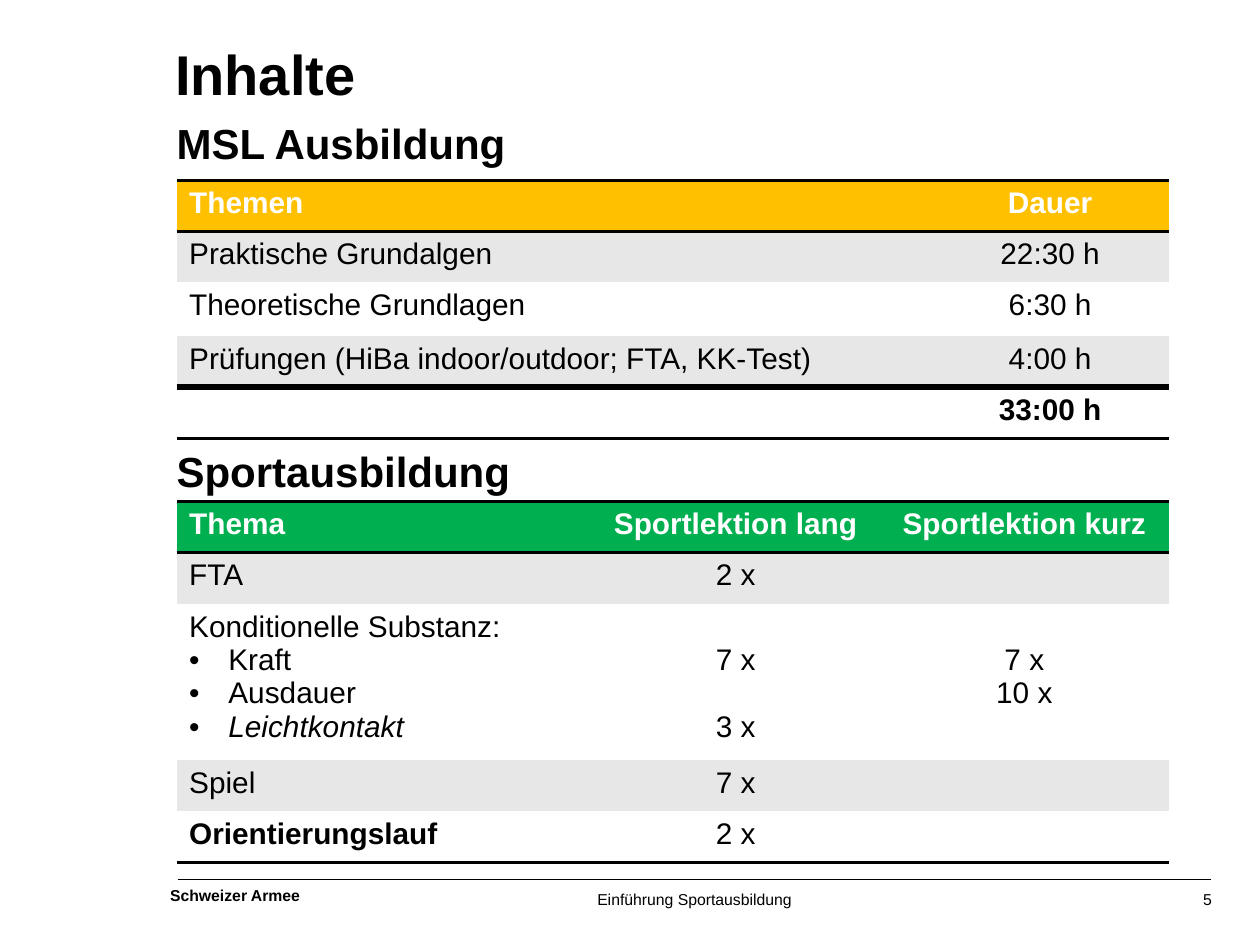
from lxml.etree import SubElement
from pptx import Presentation
from pptx.dml.color import RGBColor
from pptx.enum.shapes import MSO_CONNECTOR as Connector
from pptx.enum.text import MSO_ANCHOR as Anchor, MSO_AUTO_SIZE as AutoSize, PP_ALIGN as Align
from pptx.oxml.ns import qn
from pptx.util import Cm, Pt

BLACK = RGBColor(0x00, 0x00, 0x00)
WHITE = RGBColor(0xFF, 0xFF, 0xFF)
GREY = RGBColor(0xE7, 0xE7, 0xE7)
YELLOW = RGBColor(0xFF, 0xC0, 0x00)
GREEN = RGBColor(0x00, 0xB0, 0x50)
NO_GRID_STYLE = "{2D5ABB26-0587-4C30-8999-92F81FD0307C}"


class SlideBuilder:
    font_name = "Arial"
    table_size = 17
    line_step = 19  # points from one table line to the next
    indent = Cm(0.79)

    def __init__(self, slide):
        self.slide = slide

    def style(self, paragraph, size, bold=False, italic=False, color=BLACK, align=Align.LEFT):
        paragraph.alignment = align
        font = paragraph.font
        font.name, font.size = self.font_name, Pt(size)
        font.bold, font.italic = bold, italic
        font.color.rgb = color

    def fill_frame(self, frame, text, size, **look):
        frame.margin_left = frame.margin_right = frame.margin_top = frame.margin_bottom = 0
        frame.vertical_anchor = Anchor.TOP
        frame.auto_size = AutoSize.NONE
        frame.word_wrap = True
        frame.text = text
        self.style(frame.paragraphs[0], size, **look)

    def title(self, text, left, top, width, height):
        title = self.slide.shapes.title
        title.left, title.top, title.width, title.height = Cm(left), Cm(top), Cm(width), Cm(height)
        self.fill_frame(title.text_frame, text, 32, bold=True)

    def text(self, text, left, top, width, height, size, **look):
        box = self.slide.shapes.add_textbox(Cm(left), Cm(top), Cm(width), Cm(height))
        self.fill_frame(box.text_frame, text, size, **look)

    def rule(self, left, right, y):
        rule = self.slide.shapes.add_connector(
            Connector.STRAIGHT, Cm(left), Cm(y), Cm(right), Cm(y))
        rule.line.color.rgb = BLACK
        rule.line.width = Pt(0.75)
        SubElement(rule._element.spPr, qn("a:effectLst"))

    def border(self, cell, side, points):
        line = SubElement(cell._tc.get_or_add_tcPr(), qn(f"a:ln{side}"), w=str(Pt(points)))
        color = SubElement(SubElement(line, qn("a:solidFill")), qn("a:srgbClr"))
        color.set("val", str(BLACK))

    def bullet(self, paragraph):
        properties = paragraph._p.get_or_add_pPr()
        properties.set("marL", str(self.indent))
        properties.set("indent", str(-self.indent))
        SubElement(properties, qn("a:buFont"), typeface=self.font_name)
        SubElement(properties, qn("a:buChar"), char="•")

    def table(self, left, top, widths, heights, rows, header_fill, borders, bold_cells):
        """borders maps a row to its top and bottom line widths in points."""
        table = self.slide.shapes.add_table(
            len(rows), len(widths), Cm(left), Cm(top), Cm(sum(widths)), Cm(sum(heights))).table
        table._tbl.tblPr.find(qn("a:tableStyleId")).text = NO_GRID_STYLE
        for column, width in zip(table.columns, widths):
            column.width = Cm(width)
        for r, (row, height) in enumerate(zip(rows, heights)):
            table.rows[r].height = Cm(height)
            for c, text in enumerate(row):
                cell = table.cell(r, c)
                for side, points in zip("TB", borders.get(r, ())):
                    if points:
                        self.border(cell, side, points)
                cell.fill.solid()
                cell.fill.fore_color.rgb = header_fill if r == 0 else GREY if r % 2 else WHITE
                cell.text = text
                for paragraph in cell.text_frame.paragraphs:
                    self.style(paragraph, self.table_size,
                               bold=r == 0 or (r, c) in bold_cells,
                               color=WHITE if r == 0 else BLACK,
                               align=Align.CENTER if c else Align.LEFT)
        return table


def main():
    deck = Presentation()
    deck.slide_width, deck.slide_height = Cm(25.4), Cm(19.05)
    page = SlideBuilder(deck.slides.add_slide(deck.slide_layouts[5]))

    # Footer
    page.rule(3.58, 24.41, 17.73)
    page.text("Schweizer Armee", 3.43, 17.86, 4, 0.4, 9, bold=True)
    page.text("Einführung Sportausbildung", 11, 17.93, 6, 0.4, 9, align=Align.CENTER)
    page.text("5", 23.43, 17.93, 1, 0.4, 9, align=Align.RIGHT)

    # Title and section headings
    page.title("Inhalte", 3.53, 0.79, 20.73, 1.4)
    page.text("MSL Ausbildung", 3.56, 2.36, 14, 1.02, 24, bold=True)
    page.text("Sportausbildung", 3.56, 8.99, 14, 1.02, 24, bold=True)

    # Hours per topic
    page.table(
        3.56, 3.63, [15.22, 4.78], [1.03, 1.03, 1.09, 1.03, 1.03],
        [["Themen", "Dauer"],
         ["Praktische Grundalgen", "22:30 h"],
         ["Theoretische Grundlagen", "6:30 h"],
         ["Prüfungen (HiBa indoor/outdoor; FTA, KK-Test)", "4:00 h"],
         ["", "33:00 h"]],
        YELLOW, {0: (2, 2), 4: (4, 2)}, {(4, 1)})

    # Sport lessons
    lessons = page.table(
        3.56, 10.11, [8.36, 5.82, 5.82], [1.03, 1.03, 3.15, 1.03, 1.03],
        [["Thema", "Sportlektion lang", "Sportlektion kurz"],
         ["FTA", "2 x", ""],
         ["Konditionelle Substanz:\nKraft\nAusdauer\nLeichtkontakt", "7 x\n3 x", "7 x\n10 x"],
         ["Spiel", "7 x", ""],
         ["Orientierungslauf", "2 x", ""]],
        GREEN, {0: (2, 2), 4: (0, 2)}, {(4, 0)})

    # Fitness row: bulleted topics, with counts level with their topic
    topics, long_lessons, short_lessons = (lessons.cell(2, c) for c in range(3))
    for topic in topics.text_frame.paragraphs[1:]:
        page.bullet(topic)
    topic.font.italic = True
    for counts in (long_lessons, short_lessons):
        counts.margin_top = Cm(0.13) + Pt(page.line_step)
    long_lessons.text_frame.paragraphs[1].space_before = Pt(page.line_step)

    deck.save("out.pptx")


if __name__ == "__main__":
    main()
